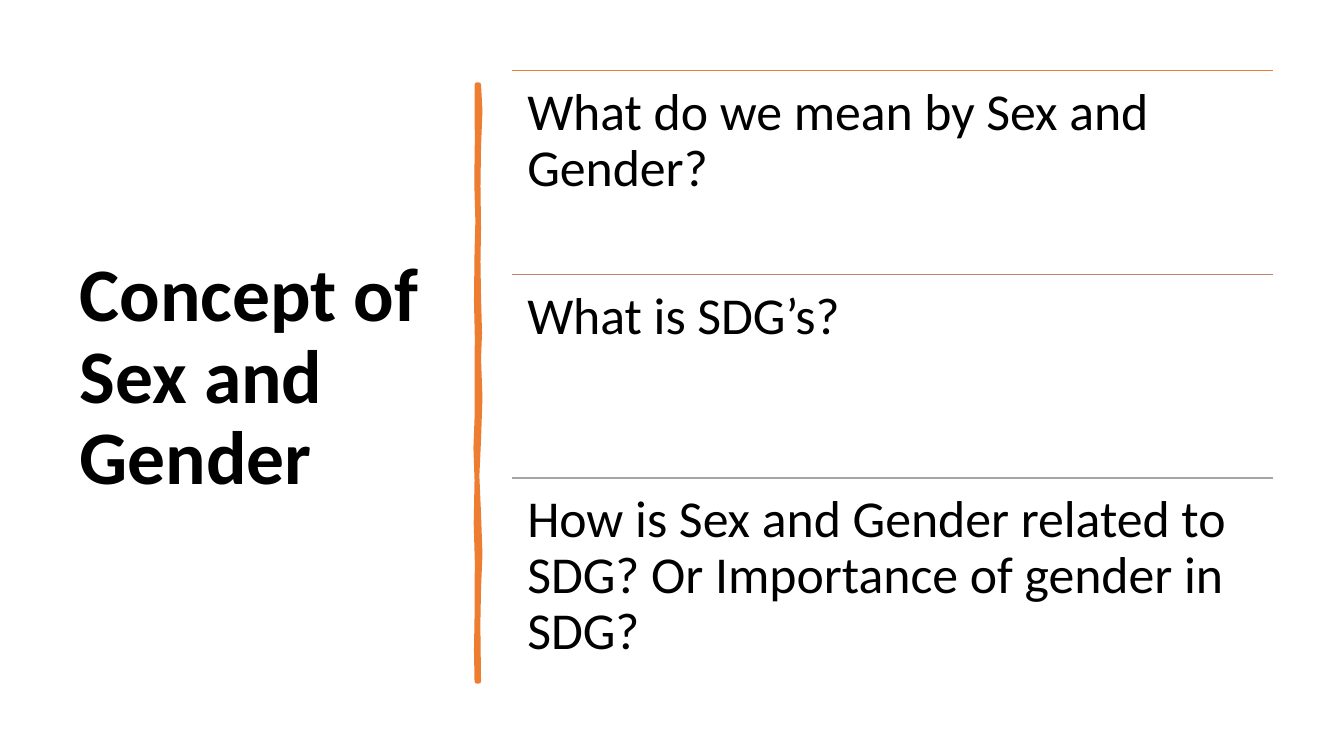
from lxml.etree import SubElement
from pptx import Presentation
from pptx.dml.color import RGBColor
from pptx.enum.shapes import MSO_CONNECTOR
from pptx.enum.text import MSO_ANCHOR, MSO_AUTO_SIZE, PP_ALIGN
from pptx.oxml.ns import qn
from pptx.util import Pt

COLORS = {"text": "000000", "orange": "ED7D31", "rust": "C48170", "gray": "A5A5A5"}


def paint(name):
    return RGBColor.from_string(COLORS[name])


def write(frame, text, size, bold, inset):
    frame.word_wrap = True
    frame.auto_size = MSO_AUTO_SIZE.NONE
    frame.margin_left = frame.margin_right = Pt(inset[0])
    frame.margin_top = frame.margin_bottom = Pt(inset[1])
    par = frame.paragraphs[0]
    par.alignment = PP_ALIGN.LEFT
    par.line_spacing = 0.9
    par.space_before = Pt(0)
    run = par.add_run()
    run.text = text
    run.font.name = "Calibri"
    run.font.size = Pt(size)
    run.font.bold = bold
    run.font.color.rgb = paint("text")


deck = Presentation()
deck.slide_width, deck.slide_height = Pt(960), Pt(540)
slide = deck.slides.add_slide(deck.slide_layouts[5])
shapes = slide.shapes

title = shapes.title
title.left, title.top, title.width, title.height = Pt(49.7), Pt(50.4), Pt(269.3), Pt(440)
write(title.text_frame, "Concept of Sex and Gender", 54, True, (7.2, 3.6))
title.text_frame.vertical_anchor = MSO_ANCHOR.MIDDLE

right = [(342, 60.5), (343, 79), (342, 105), (341.6, 133), (342, 163), (341.6, 187),
         (342, 212), (342.7, 238), (342, 256), (343, 284), (342, 314), (340.8, 340),
         (342, 367), (343, 396), (342, 420), (341.5, 446), (342, 486.7)]
left = [(340.6, 486.7), (340.2, 464), (340.6, 441), (340.8, 401), (340, 374),
        (340.6, 343), (339.8, 320), (340.6, 299), (340.6, 270), (340.8, 241),
        (340.2, 215), (340.6, 180), (341.2, 158), (340.4, 130), (340.8, 101),
        (340.6, 60.5)]
edge = [(Pt(x), Pt(y)) for x, y in right + left]
pen = shapes.build_freeform(*edge[0])
pen.add_line_segments(edge[1:], close=True)
stroke = pen.convert_to_shape()
stroke.shadow.inherit = False
stroke.fill.solid()
stroke.fill.fore_color.rgb = paint("orange")
stroke.line.color.rgb = paint("orange")
stroke.line.width = Pt(3.25)
SubElement(stroke.line._get_or_add_ln(), qn("a:round"))

items = [
    ("What do we mean by Sex and Gender?", "orange"),
    ("What is SDG’s?", "rust"),
    ("How is Sex and Gender related to SDG? Or Importance of gender in SDG?", "gray"),
]
x, width, pitch = 365.8, 543.6, 145.4
for row, (text, color) in enumerate(items):
    y = 50.5 + row * pitch
    rule = shapes.add_connector(MSO_CONNECTOR.STRAIGHT, Pt(x), Pt(y), Pt(x + width), Pt(y))
    rule.line.color.rgb = paint(color)
    rule.line.width = Pt(1)
    SubElement(rule._element.spPr, qn("a:effectLst"))
    box = shapes.add_textbox(Pt(x), Pt(y), Pt(width), Pt(pitch))
    write(box.text_frame, text, 37, False, (10.8, 10.8))

deck.save("out.pptx")
